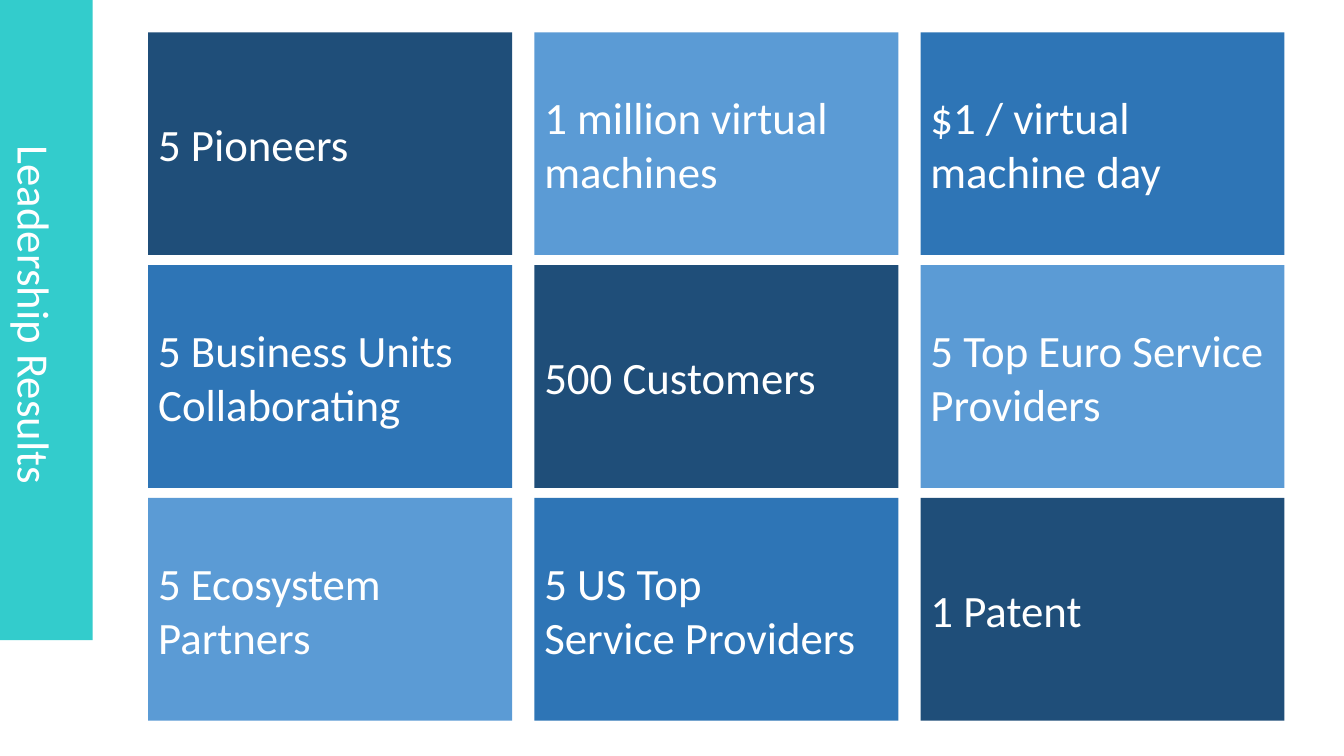
"""Build the Leadership Results slide: a vertical title band beside a grid of result tiles."""
from dataclasses import dataclass

import pptx
import pptx.dml.color
import pptx.enum.shapes
import pptx.enum.text
import pptx.shapes.autoshape
import pptx.slide
import pptx.util

Inches = pptx.util.Inches
Anchor = pptx.enum.text.MSO_ANCHOR
Align = pptx.enum.text.PP_ALIGN

COLOURS = {
    "navy": "1F4E79",
    "blue": "2E75B6",
    "sky": "5B9BD5",
    "teal": "33CCCC",
    "white": "FFFFFF",
}
DIAGONAL_FILLS = ("navy", "blue", "sky")
RESULTS = (
    ("5 Pioneers", "1 million virtual machines", "$1 / virtual machine day"),
    ("5 Business Units Collaborating", "500 Customers", "5 Top Euro Service Providers"),
    ("5 Ecosystem Partners", "5 US Top\nService Providers", "1 Patent"),
)
GRID_LEFT, GRID_TOP = 1.47, 0.32
COLUMN_STEP, ROW_STEP = 3.83, 2.31
TILE_WIDTH, TILE_HEIGHT = 3.61, 2.21


@dataclass(frozen=True)
class Panel:
    text: str
    left: float
    top: float
    width: float
    height: float
    fill: str


def colour(name: str) -> pptx.dml.color.RGBColor:
    return pptx.dml.color.RGBColor.from_string(COLOURS[name])


def result_panel(row: int, column: int, text: str) -> Panel:
    fill = DIAGONAL_FILLS[(row - column) % len(DIAGONAL_FILLS)]
    left = GRID_LEFT + column * COLUMN_STEP
    top = GRID_TOP + row * ROW_STEP
    return Panel(text, left, top, TILE_WIDTH, TILE_HEIGHT, fill)


def draw_panel(page: pptx.slide.Slide, panel: Panel) -> pptx.shapes.autoshape.Shape:
    box = page.shapes.add_shape(
        pptx.enum.shapes.MSO_SHAPE.RECTANGLE,
        Inches(panel.left), Inches(panel.top), Inches(panel.width), Inches(panel.height),
    )
    box.shadow.inherit = False
    box.fill.solid()
    box.fill.fore_color.rgb = colour(panel.fill)
    box.line.fill.background()
    frame = box.text_frame
    frame.word_wrap = True
    frame.vertical_anchor = Anchor.MIDDLE
    frame.text = panel.text
    for para in frame.paragraphs:
        para.alignment = Align.LEFT
        for span in para.runs:
            span.font.name = "Calibri"
            span.font.size = pptx.util.Pt(32)
            span.font.color.rgb = colour("white")
    return box


def draw_title(page: pptx.slide.Slide) -> None:
    box = draw_panel(page, Panel("Leadership Results", 0, 0, 0.92, 6.35, "teal"))
    frame = box.text_frame
    frame.vertical_anchor = Anchor.BOTTOM
    frame.margin_left, frame.margin_right = Inches(0.08), Inches(0.1)
    frame.margin_top, frame.margin_bottom = Inches(0.05), Inches(0.2)
    frame.paragraphs[0].alignment = Align.CENTER
    frame.paragraphs[0].line_spacing = 0.9
    frame._txBody.bodyPr.set("vert", "vert")


def main() -> None:
    deck = pptx.Presentation()
    deck.slide_width, deck.slide_height = Inches(13.33), Inches(7.5)
    page = deck.slides.add_slide(deck.slide_layouts[6])
    for row, texts in enumerate(RESULTS):
        for column, text in enumerate(texts):
            draw_panel(page, result_panel(row, column, text))
    draw_title(page)
    deck.save("out.pptx")


if __name__ == "__main__":
    main()
